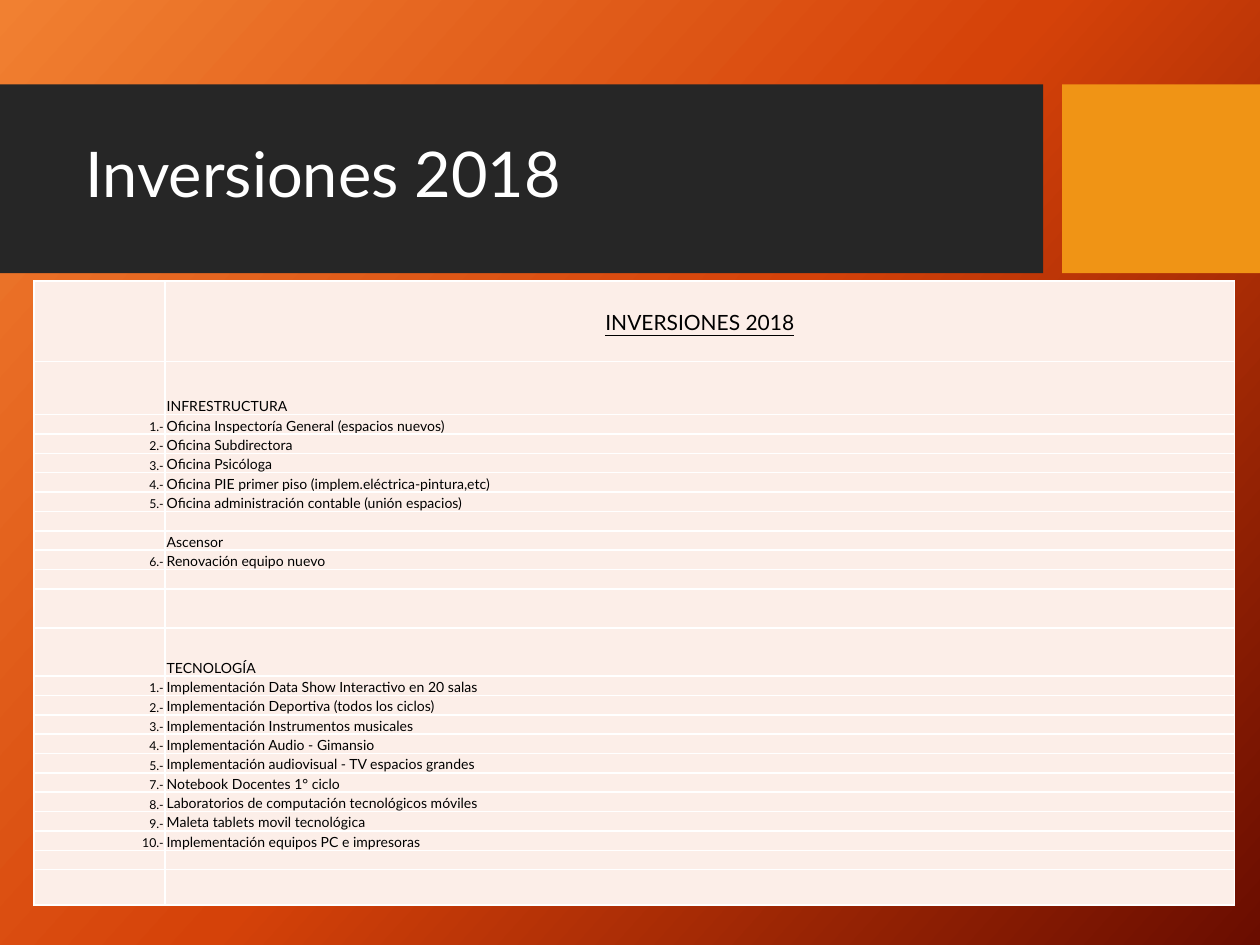
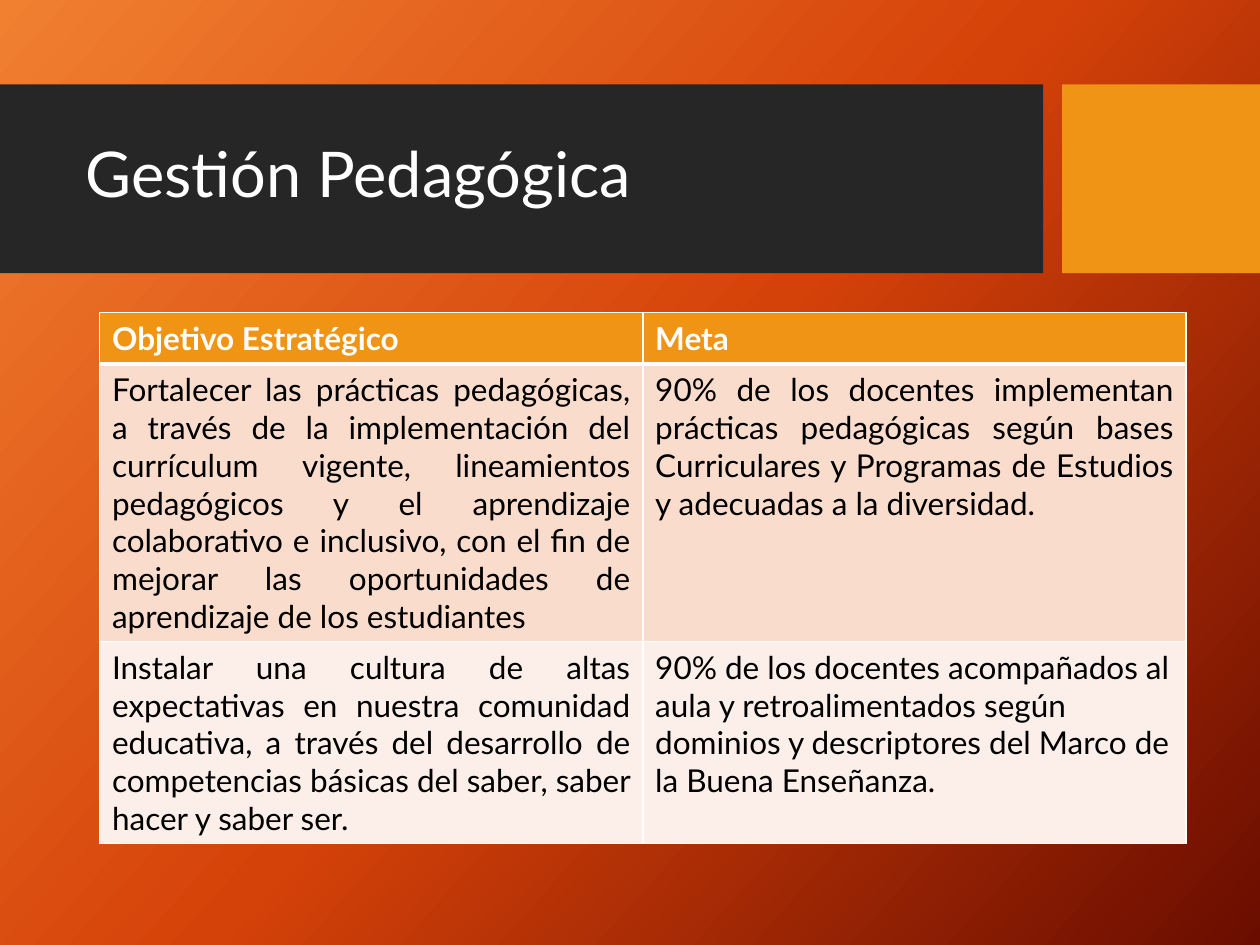
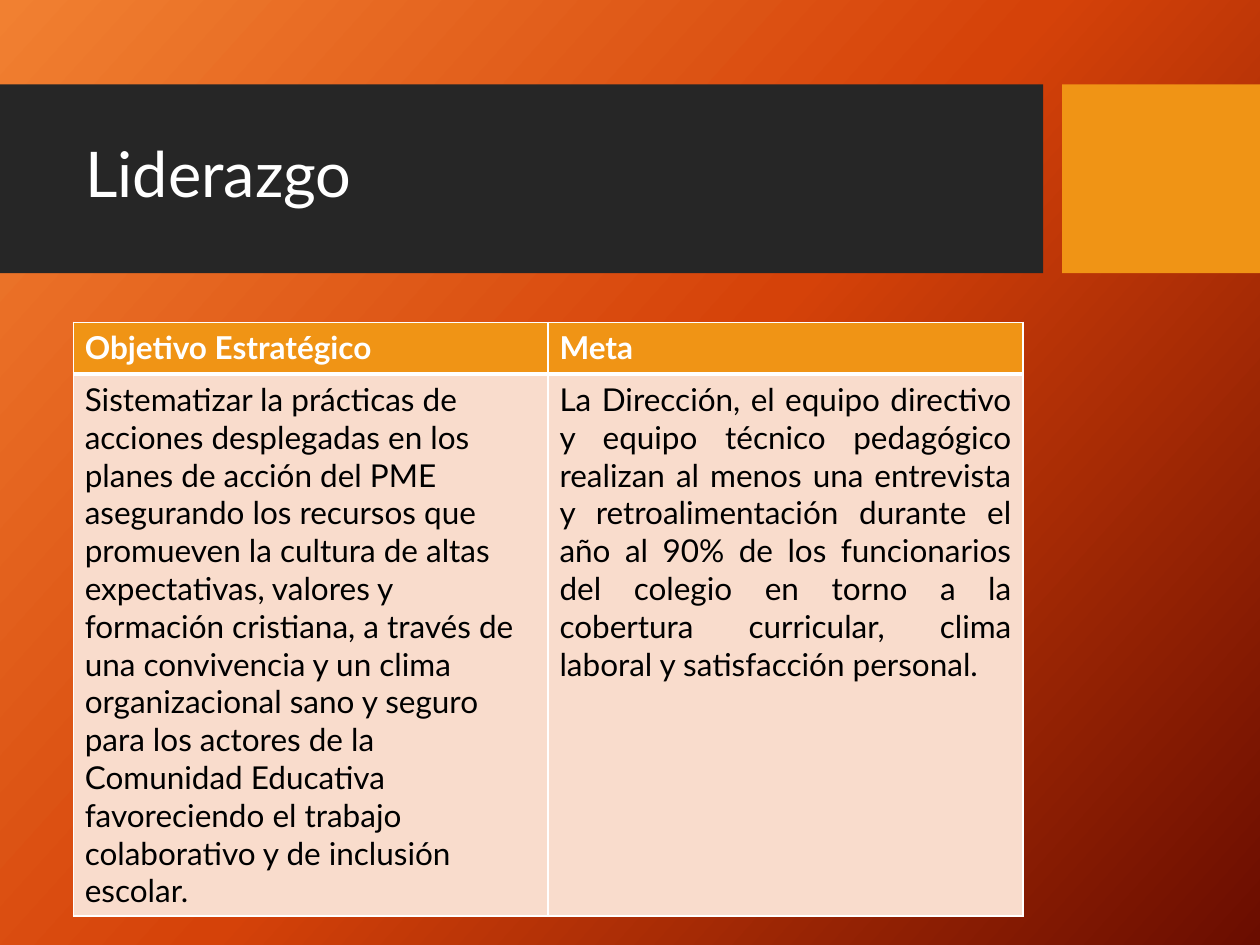
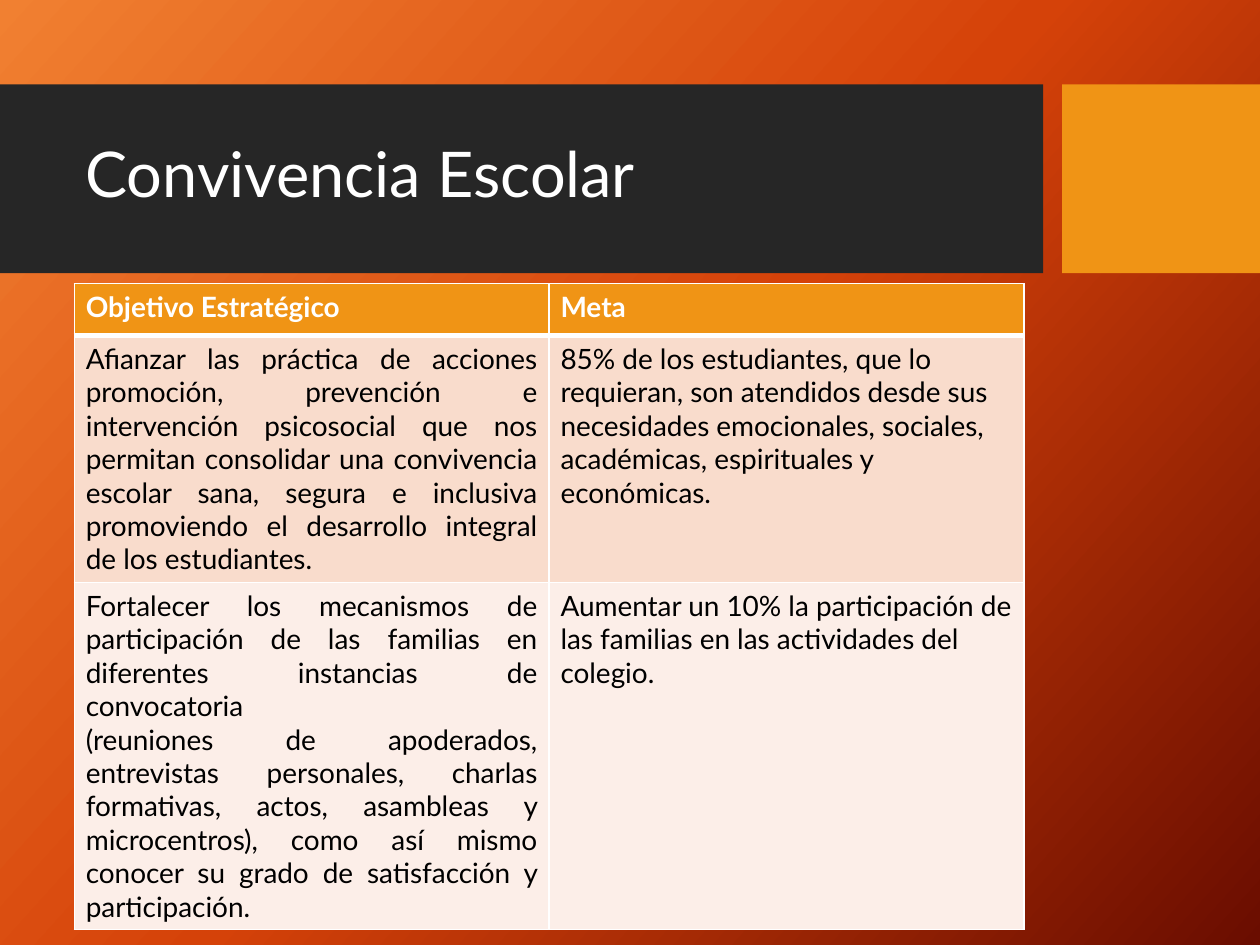
from dataclasses import dataclass

from lxml.etree import SubElement
from pptx import Presentation
from pptx.dml.color import RGBColor
from pptx.enum.shapes import MSO_SHAPE
from pptx.enum.text import MSO_ANCHOR, PP_ALIGN
from pptx.oxml import parse_xml
from pptx.oxml.ns import nsdecls, qn
from pptx.util import Cm, Pt

FONT = "Lato"
WHITE = RGBColor(0xFF, 0xFF, 0xFF)
BLACK = RGBColor(0x00, 0x00, 0x00)
CHARCOAL = RGBColor(0x26, 0x26, 0x26)
AMBER = RGBColor(0xF0, 0x94, 0x15)
PEACH = RGBColor(0xF9, 0xDC, 0xCC)
CREAM = RGBColor(0xFC, 0xEE, 0xE8)
BACKDROP = (
    (0, RGBColor(0xF1, 0x80, 0x31)),
    (50, RGBColor(0xD5, 0x42, 0x09)),
    (100, RGBColor(0x6A, 0x0D, 0x00)),
)
BACKDROP_ANGLE = 42
THIN, THICK = 1, 3
LEFT, CENTER, RIGHT, JUSTIFY = (
    PP_ALIGN.LEFT, PP_ALIGN.CENTER, PP_ALIGN.RIGHT, PP_ALIGN.JUSTIFY)


@dataclass(frozen=True)
class Band:
    left: float
    width: float
    color: RGBColor


@dataclass(frozen=True)
class CellStyle:
    fill: RGBColor
    size: float
    color: RGBColor = BLACK
    align: PP_ALIGN = LEFT
    anchor: MSO_ANCHOR = MSO_ANCHOR.TOP
    margins: tuple[float, float, float, float] = (0.25, 0.13, 0.25, 0.13)
    bold: bool = False
    underline: bool = False
    top: int = THIN
    bottom: int = THIN


@dataclass(frozen=True)
class Entry:
    """Text of one goal cell; each line break starts a paragraph."""
    text: str
    align: PP_ALIGN = JUSTIFY


@dataclass(frozen=True)
class GoalPage:
    title: str
    left: float
    top: float
    column_width: float
    side_margin: float
    size: float
    heights: tuple[float, ...]
    rows: tuple[tuple[Entry, Entry], ...]


@dataclass(frozen=True)
class InvestmentRow:
    number: str = ""
    text: str = ""
    height: float = 0.39


BAND_TOP, BAND_HEIGHT = 1.7, 3.81
BANDS = (Band(0, 21.03, CHARCOAL), Band(21.41, 3.99, AMBER))

INVESTMENTS = (
    InvestmentRow(text="INVERSIONES 2018", height=1.63),
    InvestmentRow(text="INFRESTRUCTURA", height=1.07),
    InvestmentRow("1.-", "Oficina Inspectoría General (espacios nuevos)"),
    InvestmentRow("2.-", "Oficina Subdirectora"),
    InvestmentRow("3.-", "Oficina Psicóloga"),
    InvestmentRow("4.-", "Oficina PIE primer piso (implem.eléctrica-pintura,etc)"),
    InvestmentRow("5.-", "Oficina administración contable (unión espacios)"),
    InvestmentRow(),
    InvestmentRow(text="Ascensor"),
    InvestmentRow("6.-", "Renovación equipo nuevo"),
    InvestmentRow(),
    InvestmentRow(height=0.79),
    InvestmentRow(text="TECNOLOGÍA", height=0.97),
    InvestmentRow("1.-", "Implementación Data Show Interactivo en 20 salas"),
    InvestmentRow("2.-", "Implementación Deportiva (todos los ciclos)"),
    InvestmentRow("3.-", "Implementación Instrumentos musicales"),
    InvestmentRow("4.-", "Implementación Audio - Gimansio"),
    InvestmentRow("5.-", "Implementación audiovisual - TV espacios grandes"),
    InvestmentRow("7.-", "Notebook Docentes 1° ciclo"),
    InvestmentRow("8.-", "Laboratorios de computación tecnológicos móviles"),
    InvestmentRow("9.-", "Maleta tablets movil tecnológica"),
    InvestmentRow("10.-", "Implementación equipos PC e impresoras"),
    InvestmentRow(),
    InvestmentRow(height=0.71),
)

GOAL_PAGES = (
    GoalPage(
        "Gestión Pedagógica", 2.01, 6.3, 10.95, 0.25, 18, (1.04, 5.58, 4.06),
        (
            (Entry("Fortalecer las prácticas pedagógicas, a través de la "
                   "implementación del currículum vigente, lineamientos "
                   "pedagógicos y el aprendizaje colaborativo e inclusivo, con "
                   "el fin de mejorar las oportunidades de aprendizaje de los "
                   "estudiantes"),
             Entry("90% de los docentes implementan prácticas pedagógicas según "
                   "bases Curriculares y Programas de Estudios y adecuadas a la "
                   "diversidad.")),
            (Entry("Instalar una cultura de altas expectativas en nuestra "
                   "comunidad educativa, a través del desarrollo de competencias "
                   "básicas del saber, saber hacer y saber ser."),
             Entry("90% de los docentes acompañados al aula y retroalimentados "
                   "según dominios y descriptores del Marco de la Buena "
                   "Enseñanza.", LEFT)),
        ),
    ),
    GoalPage(
        "Liderazgo", 1.48, 6.5, 9.57, 0.23, 18, (1.04, 10.92),
        (
            (Entry("Sistematizar la prácticas de acciones desplegadas en los "
                   "planes de acción del PME asegurando los recursos que "
                   "promueven la cultura de altas expectativas, valores y "
                   "formación cristiana, a través de una convivencia y un clima "
                   "organizacional sano y seguro para los actores de la "
                   "Comunidad Educativa favoreciendo el trabajo colaborativo y "
                   "de inclusión\nescolar.", LEFT),
             Entry("La Dirección, el equipo directivo y equipo técnico "
                   "pedagógico realizan al menos una entrevista y "
                   "retroalimentación durante el año al 90% de los funcionarios "
                   "del colegio en torno a la cobertura curricular, clima "
                   "laboral y satisfacción personal.")),
        ),
    ),
    GoalPage(
        "Convivencia Escolar", 1.5, 5.72, 9.57, 0.23, 16, (1.04, 4.95, 6.33),
        (
            (Entry("Afianzar las práctica de acciones promoción, prevención e "
                   "intervención psicosocial que nos permitan consolidar una "
                   "convivencia escolar sana, segura e inclusiva promoviendo el "
                   "desarrollo integral de los estudiantes."),
             Entry("85% de los estudiantes, que lo requieran, son atendidos "
                   "desde sus necesidades emocionales, sociales, académicas, "
                   "espirituales y económicas.", LEFT)),
            (Entry("Fortalecer los mecanismos de participación de las familias "
                   "en diferentes instancias de convocatoria\n(reuniones de "
                   "apoderados, entrevistas personales, charlas formativas, "
                   "actos, asambleas y microcentros), como así mismo conocer su "
                   "grado de satisfacción y participación."),
             Entry("Aumentar un 10% la participación de las familias en las "
                   "actividades del colegio.", LEFT)),
        ),
    ),
)


def paint_backdrop(master) -> None:
    fill = master.background.fill
    fill.gradient()
    fill.gradient_angle = 360 - BACKDROP_ANGLE
    stops = master.element.find(".//" + qn("a:gsLst"))
    stops.clear()
    for percent, color in BACKDROP:
        stop = SubElement(stops, qn("a:gs"), pos=str(percent * 1000))
        SubElement(stop, qn("a:srgbClr"), val=str(color))


def move_bands_to_layout(page, layout) -> None:
    """Draw the bands once and hand them to the layout, behind its placeholders."""
    for index, band in enumerate(BANDS):
        shape = page.shapes.add_shape(
            MSO_SHAPE.RECTANGLE, Cm(band.left), Cm(BAND_TOP),
            Cm(band.width), Cm(BAND_HEIGHT))
        shape.shadow.inherit = False
        shape.fill.solid()
        shape.fill.fore_color.rgb = band.color
        shape.line.fill.background()
        layout.shapes.element.insert(2 + index, shape.element)


def set_title(page, text: str) -> None:
    title = page.shapes.title
    title.left, title.top = Cm(1.47), Cm(2.08)
    title.width, title.height = Cm(19.15), Cm(3)
    frame = title.text_frame
    frame.text = text
    frame.vertical_anchor = MSO_ANCHOR.MIDDLE
    para = frame.paragraphs[0]
    para.alignment = LEFT
    para.line_spacing = 0.9
    para.font.name = FONT
    para.font.size = Pt(36)
    para.font.color.rgb = WHITE


def set_borders(cell, top: int, bottom: int) -> None:
    properties = cell.fill and cell.text_frame._txBody.getparent().get_or_add_tcPr()
    sides = (("lnL", THIN), ("lnR", THIN), ("lnT", top), ("lnB", bottom))
    for index, (side, width) in enumerate(sides):
        properties.insert(index, parse_xml(
            f'<a:{side} {nsdecls("a")} w="{Pt(width)}"><a:solidFill>'
            f'<a:srgbClr val="{WHITE}"/></a:solidFill></a:{side}>'))


def fill_cell(cell, text: str, style: CellStyle) -> None:
    cell.fill.solid()
    cell.fill.fore_color.rgb = style.fill
    cell.vertical_anchor = style.anchor
    (cell.margin_left, cell.margin_top,
     cell.margin_right, cell.margin_bottom) = map(Cm, style.margins)
    cell.text_frame.text = text
    for para in cell.text_frame.paragraphs:
        para.alignment = style.align
        para.font.name = FONT
        para.font.size = Pt(style.size)
        para.font.bold = style.bold
        para.font.underline = style.underline
        para.font.color.rgb = style.color
        if not text:
            SubElement(para._p, qn("a:endParaRPr"), sz=str(int(style.size * 100)))
    set_borders(cell, style.top, style.bottom)


def add_grid(page, left: float, top: float, widths: tuple[float, ...],
             heights: tuple[float, ...]):
    table = page.shapes.add_table(
        len(heights), len(widths), Cm(left), Cm(top),
        Cm(sum(widths)), Cm(sum(heights))).table
    table.horz_banding = False
    for column, width in zip(table.columns, widths):
        column.width = Cm(width)
    for row, height in zip(table.rows, heights):
        row.height = Cm(height)
    return table


def add_investments(page) -> None:
    table = add_grid(page, 0.69, 5.66, (2.64, 21.56),
                     tuple(row.height for row in INVESTMENTS))
    table.first_row = False
    tight = (0.03, 0.03, 0.03, 0)
    number = CellStyle(CREAM, 7, align=RIGHT, anchor=MSO_ANCHOR.BOTTOM, margins=tight)
    item = CellStyle(CREAM, 8, anchor=MSO_ANCHOR.BOTTOM, margins=tight)
    heading = CellStyle(CREAM, 12, align=CENTER, anchor=MSO_ANCHOR.MIDDLE,
                        margins=tight, underline=True)
    for index, row in enumerate(INVESTMENTS):
        fill_cell(table.cell(index, 0), row.number, number)
        fill_cell(table.cell(index, 1), row.text, item if index else heading)


def add_goals(page, goals: GoalPage) -> None:
    table = add_grid(page, goals.left, goals.top, (goals.column_width,) * 2,
                     goals.heights)
    margins = (goals.side_margin, 0.13) * 2
    header = CellStyle(AMBER, goals.size, WHITE, margins=margins, bold=True,
                       bottom=THICK)
    for column, text in enumerate(("Objetivo Estratégico", "Meta")):
        fill_cell(table.cell(0, column), text, header)
    for index, entries in enumerate(goals.rows, start=1):
        for column, entry in enumerate(entries):
            style = CellStyle(PEACH if index % 2 else CREAM, goals.size,
                              align=entry.align, margins=margins,
                              top=THICK if index == 1 else THIN)
            fill_cell(table.cell(index, column), entry.text, style)


def main() -> None:
    deck = Presentation()
    deck.slide_width, deck.slide_height = Cm(25.4), Cm(19.05)
    layout = deck.slide_layouts.get_by_name("Title Only")
    paint_backdrop(deck.slide_master)

    page = deck.slides.add_slide(layout)
    move_bands_to_layout(page, layout)
    set_title(page, "Inversiones 2018")
    add_investments(page)

    for goals in GOAL_PAGES:
        page = deck.slides.add_slide(layout)
        set_title(page, goals.title)
        add_goals(page, goals)

    deck.save("out.pptx")


if __name__ == "__main__":
    main()
